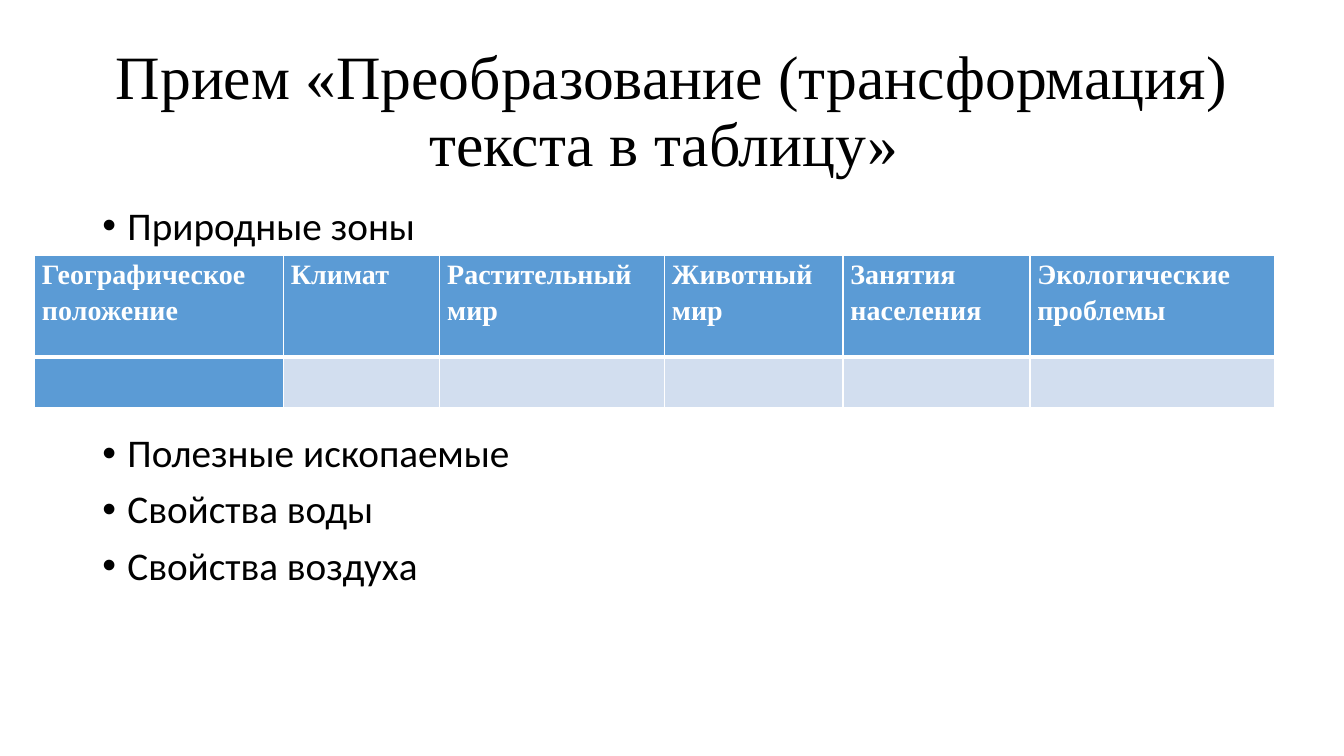
from lxml import etree
from pptx import Presentation
from pptx.dml.color import RGBColor
from pptx.enum.text import MSO_ANCHOR as Anchor, PP_ALIGN as Align
from pptx.oxml.ns import qn
from pptx.util import Pt

PX = 9525  # EMU per px, 96 px to the inch
SLIDE_SIZE = (1280, 720)

BLACK = RGBColor(0x00, 0x00, 0x00)
WHITE = RGBColor(0xFF, 0xFF, 0xFF)
BLUE = RGBColor(0x5B, 0x9B, 0xD5)
PALE_BLUE = RGBColor(0xD2, 0xDE, 0xEF)

TITLE_FONT = {"name": "Times New Roman", "size": Pt(44)}
TOPIC_FONT = {"name": "Calibri", "size": Pt(28)}
HEADER_FONT = {"name": "Times New Roman", "size": Pt(20), "bold": True}

TITLE = "Прием «Преобразование (трансформация) текста в таблицу» "
TOPIC_GAP = 10
TABLE_GAP = 132  # points left free for the table between two topics
TOPICS = [
    ("Природные зоны", TOPIC_GAP),
    ("Полезные ископаемые", TABLE_GAP),
    ("Свойства воды", TOPIC_GAP),
    ("Свойства воздуха", TOPIC_GAP),
]
COLUMNS = [
    ("Географическое положение", 237),
    ("Климат", 149),
    ("Растительный мир", 214),
    ("Животный мир", 170),
    ("Занятия населения", 178),
    ("Экологические проблемы", 233),
]
ROW_HEIGHTS = [97, 48]
CELL_MARGINS = {"margin_left": 7 * PX, "margin_right": 7 * PX,
                "margin_top": 0, "margin_bottom": 0}


def to_emu(box):
    return [length * PX for length in box]


def write(paragraph, text, font, color, line_spacing):
    run = paragraph.add_run()
    run.text = text
    for key, value in font.items():
        setattr(run.font, key, value)
    run.font.color.rgb = color
    paragraph.line_spacing = line_spacing


def add_frame(slide, box, anchor):
    frame = slide.shapes.add_textbox(*to_emu(box)).text_frame
    frame.word_wrap = True
    frame.vertical_anchor = anchor
    return frame


def add_bullet(paragraph, indent):
    properties = paragraph._p.get_or_add_pPr()
    properties.set("marL", str(indent * PX))
    properties.set("indent", str(-indent * PX))
    etree.SubElement(properties, qn("a:buFont"), typeface="Arial")
    etree.SubElement(properties, qn("a:buChar"), char="•")


def set_borders(cell, widths):
    """Draw white borders; widths maps L, R, T and B to points."""
    properties = cell._tc.get_or_add_tcPr()
    for position, (side, width) in enumerate(widths.items()):
        line = etree.Element(qn(f"a:ln{side}"), w=str(Pt(width)))
        fill = etree.SubElement(line, qn("a:solidFill"))
        etree.SubElement(fill, qn("a:srgbClr"), val=str(WHITE))
        properties.insert(position, line)


def add_title(slide, box):
    heading = add_frame(slide, box, Anchor.MIDDLE).paragraphs[0]
    heading.alignment = Align.CENTER
    write(heading, TITLE, TITLE_FONT, BLACK, 0.9)


def add_topics(slide, box):
    frame = add_frame(slide, box, Anchor.TOP)
    for index, (topic, gap) in enumerate(TOPICS):
        paragraph = frame.add_paragraph() if index else frame.paragraphs[0]
        write(paragraph, topic, TOPIC_FONT, BLACK, 0.9)
        paragraph.space_before = Pt(gap)
        add_bullet(paragraph, 24)


def add_zones_table(slide, left, top):
    box = (left, top, sum(width for _, width in COLUMNS), sum(ROW_HEIGHTS))
    zones = slide.shapes.add_table(
        len(ROW_HEIGHTS), len(COLUMNS), *to_emu(box)).table
    for row, height in zip(zones.rows, ROW_HEIGHTS):
        row.height = height * PX
    for index, (header, width) in enumerate(COLUMNS):
        zones.columns[index].width = width * PX
        header_cell, value_cell = zones.cell(0, index), zones.cell(1, index)
        for key, value in CELL_MARGINS.items():
            setattr(header_cell, key, value)
        write(header_cell.text_frame.paragraphs[0], header,
              HEADER_FONT, WHITE, 1.15)
        for cell, color in ((header_cell, BLUE),
                            (value_cell, PALE_BLUE if index else BLUE)):
            cell.fill.solid()
            cell.fill.fore_color.rgb = color
        set_borders(header_cell, {"L": 1, "R": 1, "T": 1, "B": 3})
        set_borders(value_cell, {"L": 1, "R": 1, "T": 3, "B": 1})


def main():
    deck = Presentation()
    deck.slide_width, deck.slide_height = to_emu(SLIDE_SIZE)
    slide = deck.slides.add_slide(deck.slide_layouts[6])
    add_title(slide, (88, 38, 1104, 139))
    add_topics(slide, (88, 192, 1104, 457))
    add_zones_table(slide, 33, 243)
    deck.save("out.pptx")


if __name__ == "__main__":
    main()
